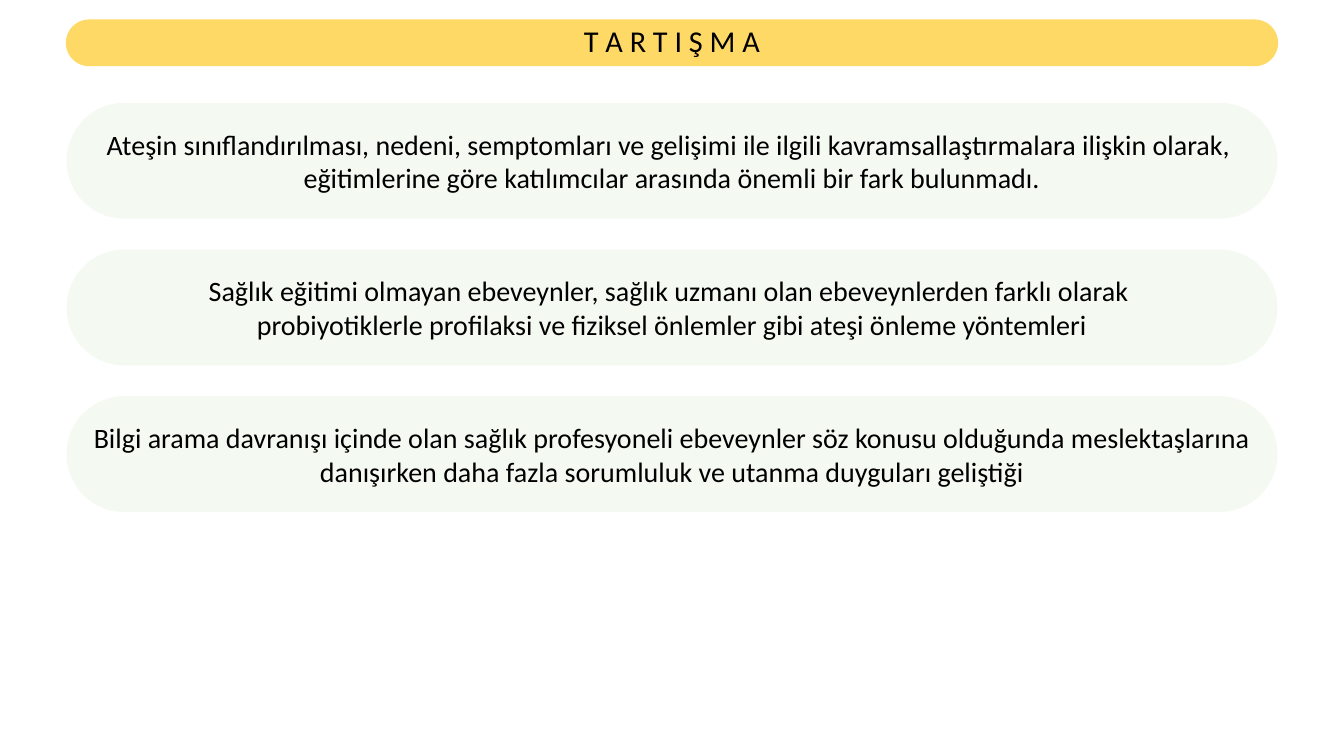
import pptx
import pptx.util
import pptx.dml.color
import pptx.enum.shapes
import pptx.enum.text
import pptx.oxml.ns
from dataclasses import dataclass
from lxml import etree
from pptx.util import Inches


@dataclass(frozen=True)
class Theme:
    font: str = "Calibri"
    ink: str = "000000"
    banner: str = "FFD966"
    card: str = "E2F0D9"
    card_alpha: int = 36
    title_size: float = 21.6
    body_size: float = 20


theme = Theme()
LEFT, WIDTH = 0.66, 12.01
CARD_TOP, CARD_HEIGHT, CARD_STEP = 1.02, 1.15, 1.455

# "\v" is a line break, "\n" starts a new paragraph
findings = [
    "Ateşin sınıflandırılması, nedeni, semptomları ve gelişimi ile ilgili "
    "kavramsallaştırmalara ilişkin olarak, \v"
    "eğitimlerine göre katılımcılar arasında önemli bir fark bulunmadı.",
    "Sağlık eğitimi olmayan ebeveynler, sağlık uzmanı olan ebeveynlerden "
    "farklı olarak \n"
    "probiyotiklerle profilaksi ve fiziksel önlemler gibi ateşi önleme yöntemleri",
    "Bilgi arama davranışı içinde olan sağlık profesyoneli ebeveynler söz konusu "
    "olduğunda meslektaşlarına danışırken daha fazla sorumluluk ve utanma "
    "duyguları geliştiği",
]


def add_pill(page, top, height, color, text, size):
    """Add a full-width, fully rounded bar with centred text."""
    pill = page.shapes.add_shape(
        pptx.enum.shapes.MSO_SHAPE.ROUNDED_RECTANGLE,
        Inches(LEFT), Inches(top), Inches(WIDTH), Inches(height))
    pill.adjustments[0] = 0.5
    pill.shadow.inherit = False
    pill.fill.solid()
    pill.fill.fore_color.rgb = pptx.dml.color.RGBColor.from_string(color)
    pill.line.fill.background()
    frame = pill.text_frame
    frame.word_wrap = True
    frame.vertical_anchor = pptx.enum.text.MSO_ANCHOR.MIDDLE
    frame.margin_left = frame.margin_right = Inches(0.08)
    frame.text = text
    for para in frame.paragraphs:
        para.alignment = pptx.enum.text.PP_ALIGN.CENTER
        for span in para.runs:
            span.font.name = theme.font
            span.font.size = pptx.util.Pt(size)
            span.font.color.rgb = pptx.dml.color.RGBColor.from_string(theme.ink)
    return pill


deck = pptx.Presentation()
deck.slide_width, deck.slide_height = Inches(13.33), Inches(7.5)
page = deck.slides.add_slide(deck.slide_layouts[6])

banner = add_pill(page, 0.2, 0.45, theme.banner, "T A R T I Ş M A", theme.title_size)
banner.line.color.rgb = pptx.dml.color.RGBColor.from_string(theme.banner)
banner.line.width = pptx.util.Pt(1)
banner.text_frame.margin_top = banner.text_frame.margin_bottom = 0
banner.text_frame.paragraphs[0].line_spacing = 0.9

for index, finding in enumerate(findings):
    card = add_pill(page, CARD_TOP + index * CARD_STEP, CARD_HEIGHT,
                    theme.card, finding, theme.body_size)
    color = card.fill._xPr.find(".//" + pptx.oxml.ns.qn("a:srgbClr"))
    alpha = etree.SubElement(color, pptx.oxml.ns.qn("a:alpha"))
    alpha.set("val", str(theme.card_alpha * 1000))

deck.save("out.pptx")
